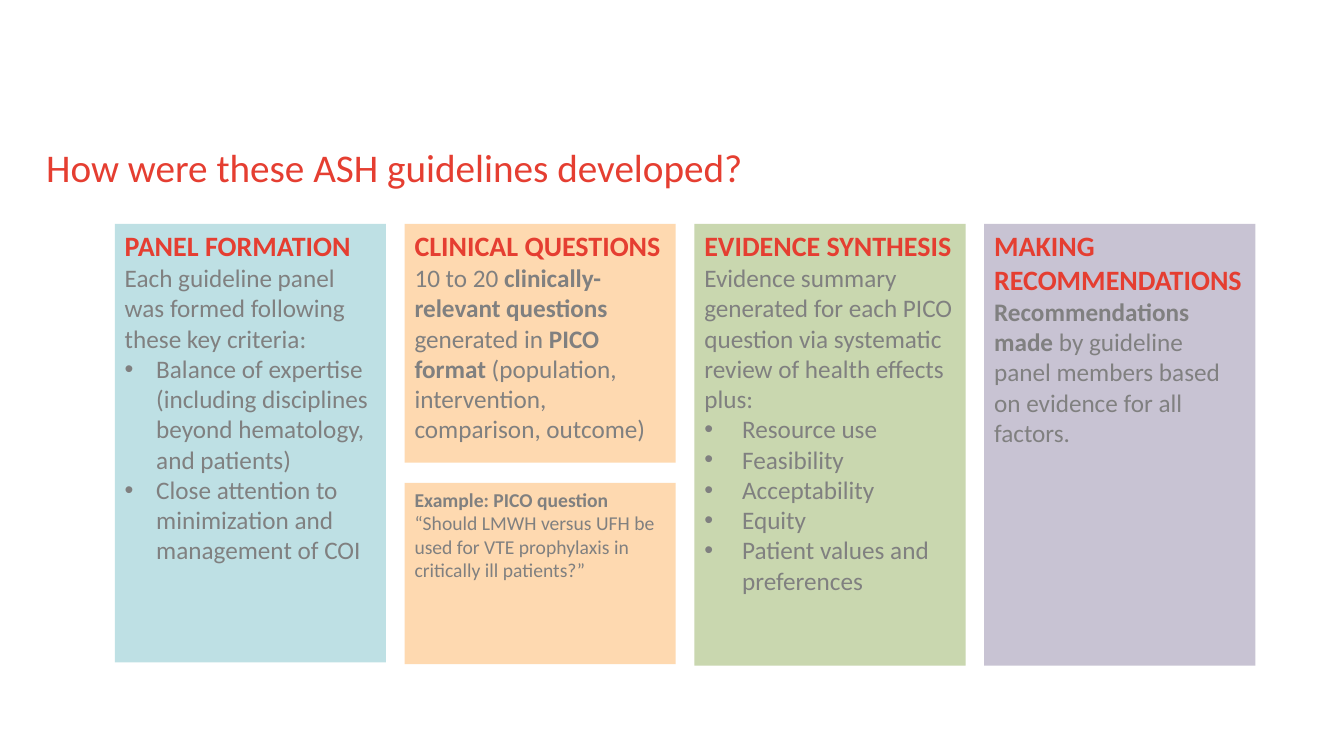
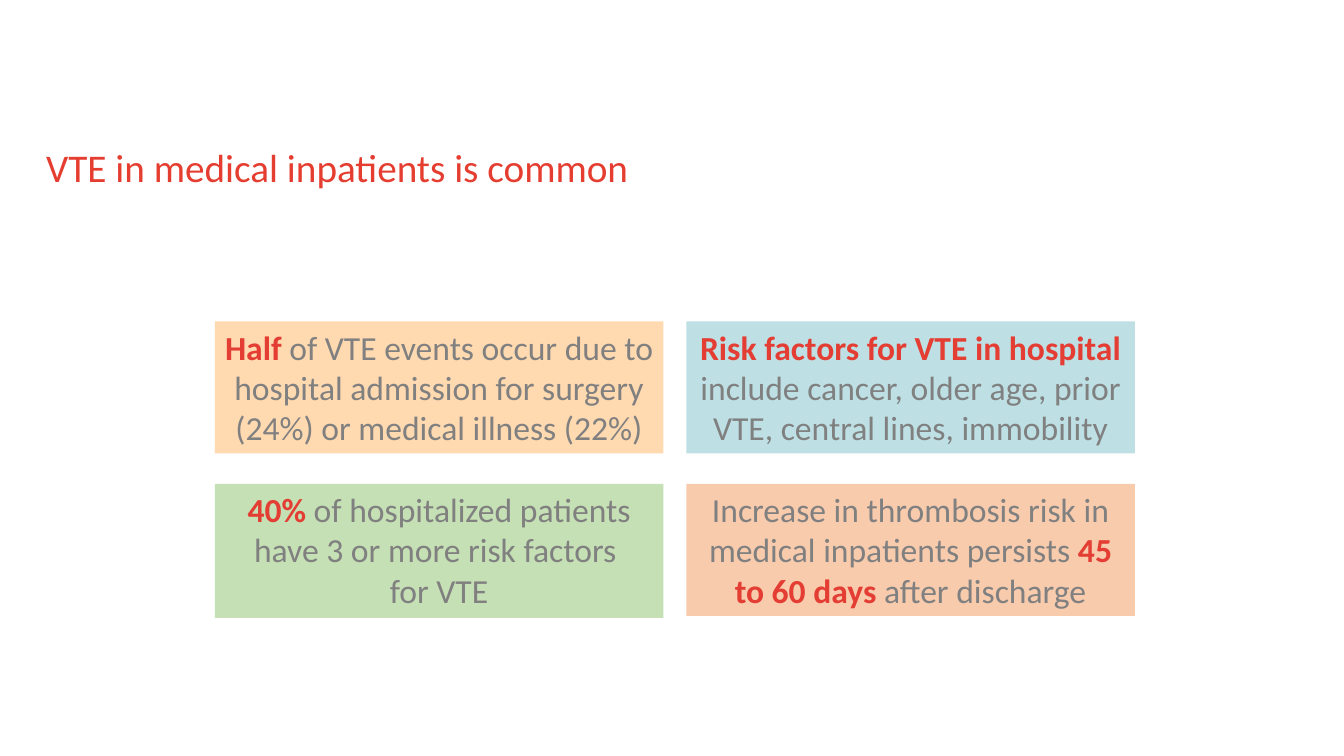
"""Build two slides on how the guidelines were made and how common VTE is."""
from lxml.etree import SubElement
from pptx import Presentation
from pptx.dml.color import RGBColor
from pptx.enum.shapes import MSO_SHAPE
from pptx.enum.text import MSO_ANCHOR, MSO_AUTO_SIZE, PP_ALIGN
from pptx.oxml.ns import qn
from pptx.util import Pt

RED, ROSE, GREY = "E53E31", "E43D33", "808080"
BLUE, PEACH, GREEN, PLUM = "BEE0E4", "FED9B0", "C9D7AF", "8B80A3"


def write(frame, text, size=18, color=GREY, strong=GREY, indent=0,
          align=PP_ALIGN.LEFT, spacing=1.0):
    """Add a paragraph; parts between asterisks are bold in the strong colour."""
    para = frame.paragraphs[0]
    if para.runs:
        para = frame.add_paragraph()
    para.alignment, para.line_spacing = align, spacing
    if indent:
        props = para._p.get_or_add_pPr()
        props.set("marL", str(Pt(indent)))
        props.set("indent", str(-Pt(indent)))
        SubElement(props, qn("a:buFont")).set("typeface", "Arial")
        SubElement(props, qn("a:buChar")).set("char", "•")
    for num, part in enumerate(text.split("*")):
        for row, line in enumerate(part.split("\n")):
            if row:
                para.add_line_break()
            if line:
                run = para.add_run()
                run.text = line
                font = run.font
                font.name, font.size, font.bold = "Calibri", Pt(size), num % 2 == 1
                font.color.rgb = RGBColor.from_string(strong if num % 2 else color)


def card(slide, left, top, width, height, fill, alpha=None):
    """Add a plain filled box and return its text frame."""
    box = slide.shapes.add_shape(
        MSO_SHAPE.RECTANGLE, Pt(left), Pt(top), Pt(width), Pt(height))
    box.shadow.inherit = False
    box.line.fill.background()
    box.fill.solid()
    box.fill.fore_color.rgb = RGBColor.from_string(fill)
    if alpha:
        tint = box._element.spPr.find(".//" + qn("a:srgbClr"))
        SubElement(tint, qn("a:alpha")).set("val", str(alpha * 1000))
    frame = box.text_frame
    frame.word_wrap = True
    frame.vertical_anchor = MSO_ANCHOR.TOP
    return frame


deck = Presentation()
deck.slide_width, deck.slide_height = Pt(960), Pt(540)

slides = []
for name in ("How were these ASH guidelines developed?",
             "VTE in medical inpatients is common"):
    slide = deck.slides.add_slide(deck.slide_layouts[5])
    title = slide.shapes.title
    title.left, title.top, title.width, title.height = Pt(33), Pt(106), Pt(864), Pt(33)
    frame = title.text_frame
    frame.margin_left = frame.margin_right = frame.margin_top = frame.margin_bottom = 0
    frame.word_wrap = True
    frame.auto_size = MSO_AUTO_SIZE.NONE
    frame.vertical_anchor = MSO_ANCHOR.TOP
    write(frame, name, size=28, color=RED, spacing=0.9)
    slides.append(slide)
steps, facts = slides

LEFT, TOP, STEP, WIDE = 82, 160, 207, 193.7
panels = [
    (313.2, BLUE, None, "PANEL FORMATION",
     "Each guideline panel was formed following these key criteria:", 22.5,
     ["Balance of expertise (including disciplines beyond hematology, and patients)",
      "Close attention to minimization and management of COI"]),
    (170.6, PEACH, None, "CLINICAL QUESTIONS",
     "10 to 20 *clinically-relevant questions *generated in *PICO format*"
     " (population, intervention, comparison, outcome)", 0, []),
    (315.4, GREEN, None, "EVIDENCE SYNTHESIS",
     "Evidence summary generated for each PICO question via systematic review"
     " of health effects plus:", 27,
     ["Resource use", "Feasibility", "Acceptability", "Equity",
      "Patient values and preferences"]),
    (315.4, PLUM, 47, "MAKING RECOMMENDATIONS",
     "*Recommendations made *by guideline panel members based on evidence"
     " for all factors.", 0, []),
]
for col, (high, fill, alpha, head, lead, indent, points) in enumerate(panels):
    frame = card(steps, LEFT + col * STEP, TOP, WIDE, high, fill, alpha)
    write(frame, f"*{head}*", size=20, strong=RED)
    write(frame, lead)
    for point in points:
        write(frame, point, indent=indent)

frame = card(steps, LEFT + STEP, 344.9, WIDE, 129.6, PEACH)
write(frame, "*Example: PICO question*", size=14)
write(frame, "“Should LMWH versus UFH be used for VTE prophylaxis in critically"
      " ill patients?”", size=14)

tiles = [
    (94.3, "FFD9B0", "*Half *of VTE events occur due to hospital admission for"
     " surgery (24%) or medical illness (22%)"),
    (94.3, BLUE, "*Risk factors for VTE in hospital *include cancer, older age,"
     " prior VTE, central lines, immobility"),
    (95.8, "C5E0B4", "*40% *of hospitalized patients have 3 or more risk factors"
     " \nfor VTE"),
    (94.3, "F8CBAD", "Increase in thrombosis risk in medical inpatients persists"
     " *45 to 60 days *after discharge"),
]
for num, (high, fill, text) in enumerate(tiles):
    row, col = divmod(num, 2)
    frame = card(facts, 153.4 + col * 336.8, 229.6 + row * 116, 320.4, high, fill)
    write(frame, text, size=24, strong=ROSE, align=PP_ALIGN.CENTER)

deck.save("out.pptx")
